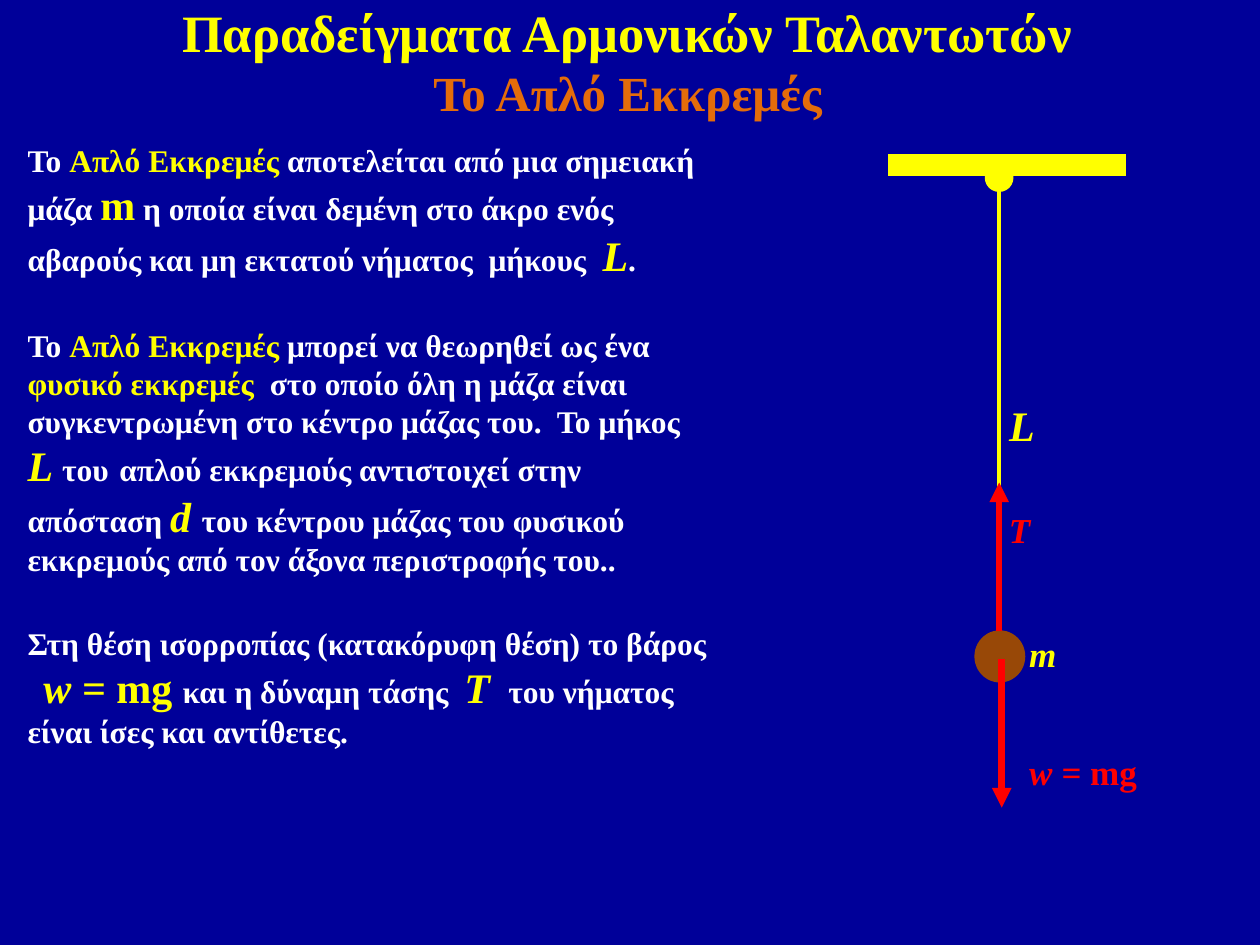
from dataclasses import dataclass

from lxml import etree
from pptx import Presentation
from pptx.dml.color import RGBColor
from pptx.enum import shapes, text
from pptx.oxml import ns
from pptx.util import Inches, Pt

FONT = "Times New Roman"
NAVY, WHITE, YELLOW = "000099", "FFFFFF", "FFFF00"
ORANGE, BROWN, RED = "E46C0A", "984807", "FF0000"


@dataclass
class Run:
    words: str
    size: float = 18
    color: str = WHITE
    slant: bool = False


@dataclass
class Box:
    left: float
    top: float
    width: float
    height: float
    runs: list[Run]
    wrap: bool = True
    title: bool = False


@dataclass
class Line:
    start: tuple[float, float]
    end: tuple[float, float]
    color: str
    weight: float
    arrow: bool = False


@dataclass
class Disc:
    left: float
    top: float
    width: float
    height: float
    color: str
    weight: float


def rgb(code: str) -> RGBColor:
    return RGBColor.from_string(code)


def term(words: str) -> Run:
    return Run(words, color=YELLOW)


def symbol(words: str, slant: bool = True) -> Run:
    return Run(words, 24, YELLOW, slant)


def title(top: float, words: str, size: float, color: str) -> Box:
    return Box(0.04, top, 9.88, 0.47, [Run(words, size, color)], title=True)


def body(top: float, height: float, *runs: Run) -> Box:
    return Box(0.12, top, 5.59, height, list(runs))


def label(left: float, top: float, width: float, height: float, *runs: Run) -> Box:
    return Box(left, top, width, height, list(runs), wrap=False)


def draw_box(slide, box: Box) -> None:
    frame = slide.shapes.add_textbox(
        Inches(box.left), Inches(box.top), Inches(box.width), Inches(box.height)
    ).text_frame
    frame.word_wrap = box.wrap
    para = frame.paragraphs[0]
    if box.title:
        frame.vertical_anchor = text.MSO_ANCHOR.MIDDLE
        para.alignment = text.PP_ALIGN.CENTER
        para.line_spacing = 0.9
    else:
        frame.auto_size = text.MSO_AUTO_SIZE.SHAPE_TO_FIT_TEXT
    for item in box.runs:
        run = para.add_run()
        run.text = item.words
        font = run.font
        font.name, font.size, font.bold = FONT, Pt(item.size), True
        font.italic = item.slant
        font.color.rgb = rgb(item.color)


def draw_line(slide, line: Line) -> None:
    ends = [Inches(v) for v in (*line.start, *line.end)]
    link = slide.shapes.add_connector(shapes.MSO_CONNECTOR.STRAIGHT, *ends)
    link.line.color.rgb = rgb(line.color)
    link.line.width = Pt(line.weight)
    if line.arrow:
        stroke = link.line._get_or_add_ln()
        etree.SubElement(stroke, ns.qn("a:tailEnd"), type="triangle")
    etree.SubElement(link._element.spPr, ns.qn("a:effectLst"))


def draw_disc(slide, disc: Disc) -> None:
    oval = slide.shapes.add_shape(
        shapes.MSO_SHAPE.OVAL,
        Inches(disc.left), Inches(disc.top), Inches(disc.width), Inches(disc.height),
    )
    oval.shadow.inherit = False
    oval.fill.solid()
    oval.fill.fore_color.rgb = rgb(disc.color)
    oval.line.color.rgb = rgb(disc.color)
    oval.line.width = Pt(disc.weight)


AXIS = 7.93

ITEMS = [
    title(0.05, "Παραδείγματα Αρμονικών Ταλαντωτών", 30, YELLOW),
    title(0.52, "Το Απλό Εκκρεμές", 28, ORANGE),
    body(
        2.54, 2.12,
        Run("Το "),
        term("Απλό Εκκρεμές "),
        Run("μπορεί να θεωρηθεί ως ένα "),
        term("φυσικό εκκρεμές  "),
        Run("στο οποίο όλη η μάζα είναι συγκεντρωμένη στο κέντρο μάζας του.  Το μήκος  "),
        symbol("L "),
        Run("του"),
        symbol(" "),
        Run("απλού εκκρεμούς αντιστοιχεί στην απόσταση "),
        symbol("d "),
        Run("του κέντρου μάζας του φυσικού εκκρεμούς από τον άξονα περιστροφής του.."),
    ),
    Line((7.05, 1.31), (8.94, 1.31), YELLOW, 12.5),
    Disc(AXIS - 0.1, 1.31, 0.2, 0.2, YELLOW, 2),
    Line((AXIS, 1.51), (AXIS, 5.09), YELLOW, 2.25),
    Disc(7.74, 5.01, 0.39, 0.4, BROWN, 1),
    body(
        1.07, 1.21,
        Run("Το "),
        term("Απλό Εκκρεμές "),
        Run("αποτελείται από μια σημειακή μάζα "),
        symbol("m", slant=False),
        Run(" η οποία είναι δεμένη στο άκρο ενός αβαρούς και μη εκτατού νήματος  μήκους  "),
        symbol("L"),
        Run("."),
    ),
    label(7.91, 3.12, 0.41, 0.5, symbol("L")),
    label(8.07, 4.97, 0.42, 0.44, Run("m", 20, YELLOW, True)),
    Line((7.95, 5.23), (7.95, 6.41), RED, 3.75, arrow=True),
    label(8.07, 5.91, 1.06, 0.44, Run("w = ", 20, RED, True), Run("mg", 20, RED)),
    label(7.91, 3.99, 0.37, 0.44, Run("T", 20, RED, True)),
    body(
        4.9, 1.11,
        Run("Στη θέση ισορροπίας (κατακόρυφη θέση) το βάρος   "),
        symbol("w = "),
        symbol("mg ", slant=False),
        Run("και η δύναμη τάσης  "),
        symbol("T "),
        Run(" του νήματος είναι ίσες και αντίθετες."),
    ),
    Line((AXIS, 5.01), (AXIS, 3.83), RED, 3.75, arrow=True),
]

DRAW = {Box: draw_box, Line: draw_line, Disc: draw_disc}


def main() -> None:
    deck = Presentation()
    deck.slide_width, deck.slide_height = Inches(10), Inches(7.5)
    slide = deck.slides.add_slide(deck.slide_layouts[6])
    slide.background.fill.solid()
    slide.background.fill.fore_color.rgb = rgb(NAVY)
    for item in ITEMS:
        DRAW[type(item)](slide, item)
    deck.save("out.pptx")


if __name__ == "__main__":
    main()
